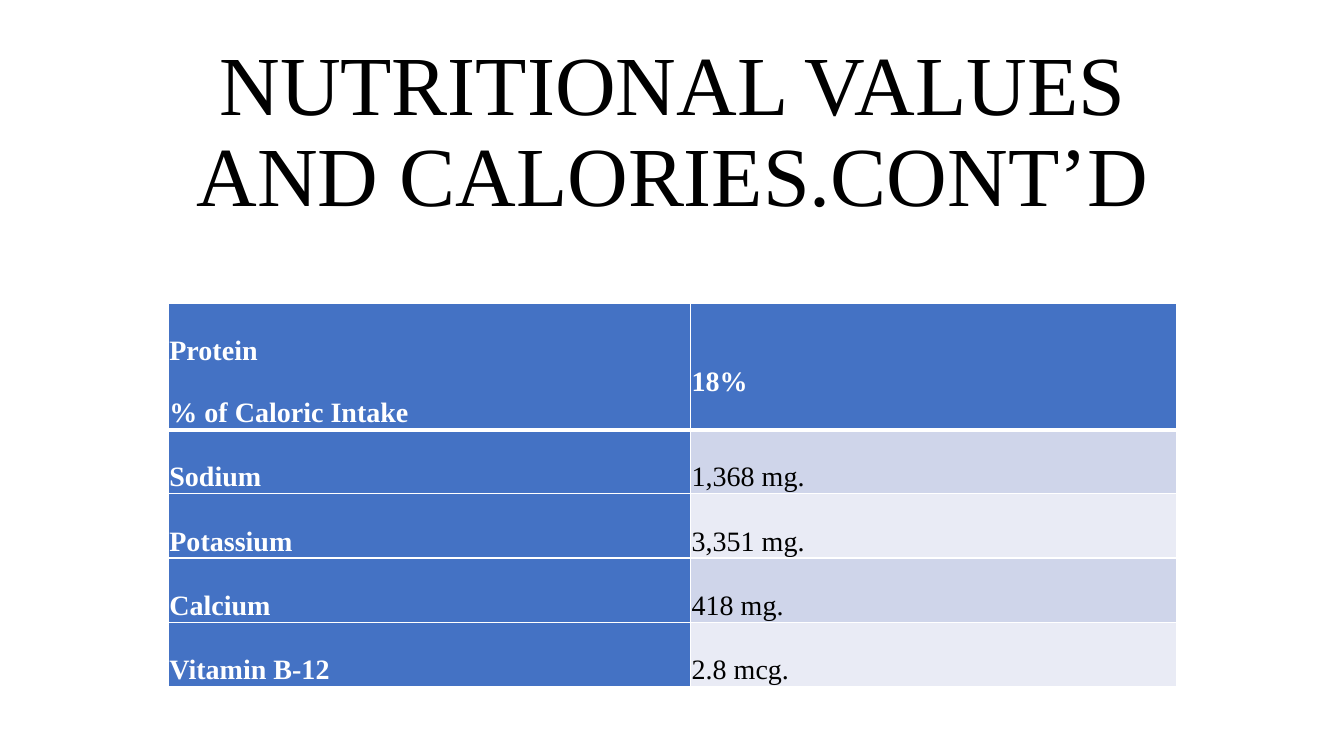
from lxml import etree
from pptx import Presentation
from pptx.dml.color import RGBColor
from pptx.enum.text import MSO_ANCHOR, MSO_AUTO_SIZE, PP_ALIGN
from pptx.oxml.ns import qn
from pptx.util import Inches, Pt

BOTTOM = MSO_ANCHOR.BOTTOM
MIDDLE = MSO_ANCHOR.MIDDLE
CENTER = PP_ALIGN.CENTER
LEFT = PP_ALIGN.LEFT
NO_AUTOFIT = MSO_AUTO_SIZE.NONE

FONT = "Times New Roman"
BLACK = "000000"
WHITE = "FFFFFF"
BLUE = "4472C4"
BANDS = ["E9EBF5", "CFD5EA"]

NUTRIENTS = [
    ("Protein\n% of Caloric Intake", "18%"),
    ("Sodium", "1,368 mg."),
    ("Potassium", "3,351 mg."),
    ("Calcium", "418 mg."),
    ("Vitamin B-12", "2.8 mcg."),
]
COLUMN_WIDTHS = [5.18, 4.82]
ROW_HEIGHTS = [1.17] + [0.6] * 4


def write(frame, text, size, color, bold=False, align=LEFT, spacing=1.0):
    paragraph = frame.paragraphs[0]
    paragraph.text = text
    paragraph.alignment = align
    paragraph.line_spacing = spacing
    for run in paragraph.runs:
        run.font.name = FONT
        run.font.size = Pt(size)
        run.font.bold = bold
        run.font.color.rgb = RGBColor.from_string(color)


def add_border(cell, side, points):
    line = etree.SubElement(cell._tc.get_or_add_tcPr(), qn("a:" + side), w=str(Pt(points)))
    fill = etree.SubElement(line, qn("a:solidFill"))
    etree.SubElement(fill, qn("a:srgbClr"), val=WHITE)


prs = Presentation()
prs.slide_width = Inches(13.33)
prs.slide_height = Inches(7.5)
slide = prs.slides.add_slide(prs.slide_layouts[0])
subtitle = slide.placeholders[1].element
subtitle.getparent().remove(subtitle)

title = slide.shapes.title
title.left, title.top = Inches(1.67), Inches(0.34)
title.width, title.height = Inches(10), Inches(1.94)
title.text_frame.word_wrap = True
title.text_frame.auto_size = NO_AUTOFIT
title.text_frame.vertical_anchor = BOTTOM
write(title.text_frame, "NUTRITIONAL VALUES AND CALORIES.CONT’D", 60, BLACK,
      align=CENTER, spacing=0.9)

table = slide.shapes.add_table(
    len(NUTRIENTS), len(COLUMN_WIDTHS),
    Inches(1.67), Inches(3.01), Inches(10), Inches(sum(ROW_HEIGHTS))).table
table.first_col = True
for column, width in zip(table.columns, COLUMN_WIDTHS):
    column.width = Inches(width)
for row, height in zip(table.rows, ROW_HEIGHTS):
    row.height = Inches(height)

for r, nutrient in enumerate(NUTRIENTS):
    for c, text in enumerate(nutrient):
        cell = table.cell(r, c)
        heading = r == 0 or c == 0
        cell.margin_left = cell.margin_right = Inches(0.01)
        cell.margin_top = cell.margin_bottom = Inches(0.01)
        cell.vertical_anchor = MIDDLE
        add_border(cell, "lnL", 1)
        add_border(cell, "lnR", 1)
        add_border(cell, "lnT", 3 if r == 1 else 1)
        add_border(cell, "lnB", 3 if r == 0 else 1)
        cell.fill.solid()
        cell.fill.fore_color.rgb = RGBColor.from_string(BLUE if heading else BANDS[r % 2])
        write(cell.text_frame, text, 20, WHITE if heading else BLACK,
              bold=heading, spacing=2.0)

prs.save("out.pptx")
